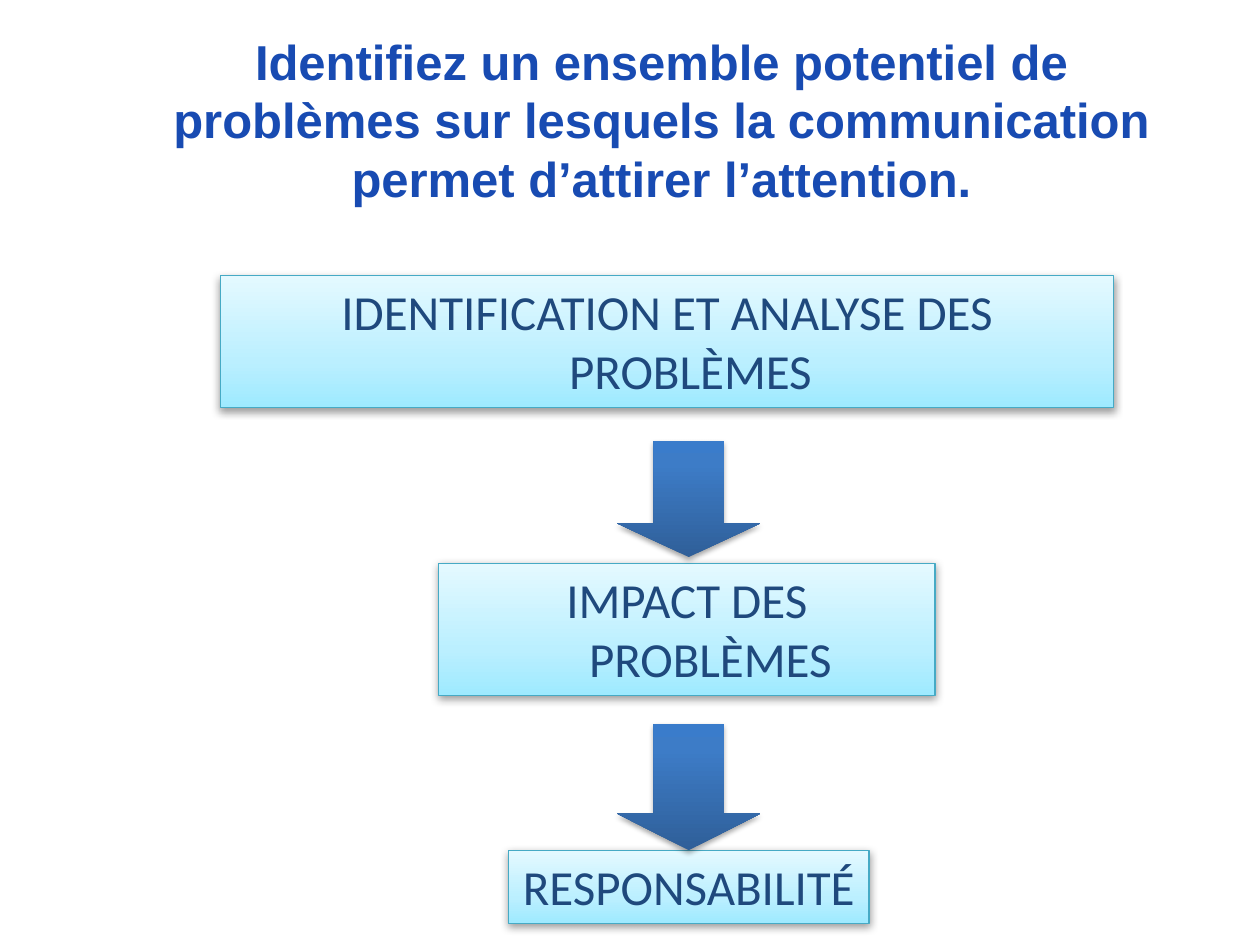
from dataclasses import dataclass

from lxml.etree import SubElement
from pptx import Presentation
from pptx.dml.color import RGBColor
from pptx.enum.shapes import MSO_SHAPE
from pptx.enum.text import MSO_ANCHOR, MSO_AUTO_SIZE, PP_ALIGN
from pptx.oxml.ns import qn
from pptx.shapes.autoshape import Shape
from pptx.slide import Slide
from pptx.text.text import _Paragraph as Paragraph
from pptx.util import Cm, Pt

COLORS = {
    "title": "184BB2",
    "step_text": "1F497D",
    "step_line": "46AAC5",
    "step_bottom": "9EEAFF",
    "step_middle": "BBEFFF",
    "step_top": "E4F9FF",
    "arrow_bottom": "2F5F99",
    "arrow_middle": "3D7CC7",
    "arrow_top": "3A7CCB",
    "shadow": "000000",
}
STEP_STOPS = ((0, "step_bottom"), (35, "step_middle"), (100, "step_top"))
ARROW_STOPS = ((0, "arrow_bottom"), (80, "arrow_middle"), (100, "arrow_top"))
ARROW_LEFT, ARROW_WIDTH = 12.44, 2.89
HANGING_INDENT = Cm(0.95)


@dataclass
class Step:
    text: str
    left: float
    top: float
    width: float
    height: float


@dataclass
class Arrow:
    top: float
    height: float


STEPS = (
    Step("IDENTIFICATION ET ANALYSE DES PROBLÈMES", 4.44, 5.55, 18.01, 2.66),
    Step("IMPACT DES PROBLÈMES", 8.84, 11.36, 10.01, 2.66),
    Step("RESPONSABILITÉ", 10.25, 17.14, 7.27, 1.48),
)
ARROWS = (Arrow(8.89, 2.34), Arrow(14.6, 2.54))


def color(name: str) -> RGBColor:
    return RGBColor.from_string(COLORS[name])


def fill_gradient(shape: Shape, stops: tuple) -> None:
    shape.fill.gradient()
    shape.fill.gradient_angle = 90
    stop_list = shape.element.spPr.find(qn("a:gradFill")).find(qn("a:gsLst"))
    for stop in list(stop_list):
        stop_list.remove(stop)
    for position, name in stops:
        stop = SubElement(stop_list, qn("a:gs"), pos=str(position * 1000))
        SubElement(stop, qn("a:srgbClr"), val=COLORS[name])


def add_shadow(shape: Shape, opacity: int, blur: float, distance: float) -> None:
    shape.shadow.inherit = False
    effects = shape.element.spPr.find(qn("a:effectLst"))
    shadow = SubElement(
        effects, qn("a:outerShdw"), blurRad=str(Pt(blur)), dist=str(Pt(distance)),
        dir="5400000", rotWithShape="0",
    )
    shade = SubElement(shadow, qn("a:srgbClr"), val=COLORS["shadow"])
    SubElement(shade, qn("a:alpha"), val=str(opacity * 1000))


def write_centered(paragraph: Paragraph, text: str, font_name: str, color_name: str) -> None:
    paragraph.text = text
    paragraph.alignment = PP_ALIGN.CENTER
    paragraph.font.name = font_name
    paragraph.font.size = Pt(28)
    paragraph.font.color.rgb = color(color_name)


def add_title(slide: Slide, text: str) -> None:
    title = slide.shapes.add_textbox(Cm(2.54), Cm(0.36), Cm(21.59), Cm(4.09))
    frame = title.text_frame
    frame.word_wrap = True
    frame.vertical_anchor = MSO_ANCHOR.MIDDLE
    write_centered(frame.paragraphs[0], text, "Arial", "title")
    frame.paragraphs[0].font.bold = True


def add_step(slide: Slide, step: Step) -> None:
    shape = slide.shapes.add_shape(
        MSO_SHAPE.RECTANGLE, Cm(step.left), Cm(step.top), Cm(step.width), Cm(step.height)
    )
    fill_gradient(shape, STEP_STOPS)
    shape.line.color.rgb = color("step_line")
    shape.line.width = Pt(0.75)
    add_shadow(shape, 38, 5, 1.6)
    frame = shape.text_frame
    frame.word_wrap = True
    frame.auto_size = MSO_AUTO_SIZE.SHAPE_TO_FIT_TEXT
    frame.vertical_anchor = MSO_ANCHOR.TOP
    paragraph = frame.paragraphs[0]
    write_centered(paragraph, step.text, "Calibri", "step_text")
    properties = paragraph._p.get_or_add_pPr()
    properties.set("marL", str(HANGING_INDENT))
    properties.set("indent", str(-HANGING_INDENT))


def add_arrow(slide: Slide, arrow: Arrow) -> None:
    shape = slide.shapes.add_shape(
        MSO_SHAPE.DOWN_ARROW, Cm(ARROW_LEFT), Cm(arrow.top), Cm(ARROW_WIDTH), Cm(arrow.height)
    )
    shape.adjustments[0] = 0.49
    shape.adjustments[1] = 0.29
    fill_gradient(shape, ARROW_STOPS)
    shape.line.fill.background()
    add_shadow(shape, 35, 3.1, 1.8)


def main() -> None:
    presentation = Presentation()
    presentation.slide_width = Cm(25.4)
    presentation.slide_height = Cm(19.05)
    slide = presentation.slides.add_slide(presentation.slide_layouts[6])
    add_title(
        slide,
        "Identifiez un ensemble potentiel de problèmes sur lesquels "
        "la communication permet d’attirer l’attention.",
    )
    for step in STEPS:
        add_step(slide, step)
    for arrow in ARROWS:
        add_arrow(slide, arrow)
    presentation.save("out.pptx")


if __name__ == "__main__":
    main()
